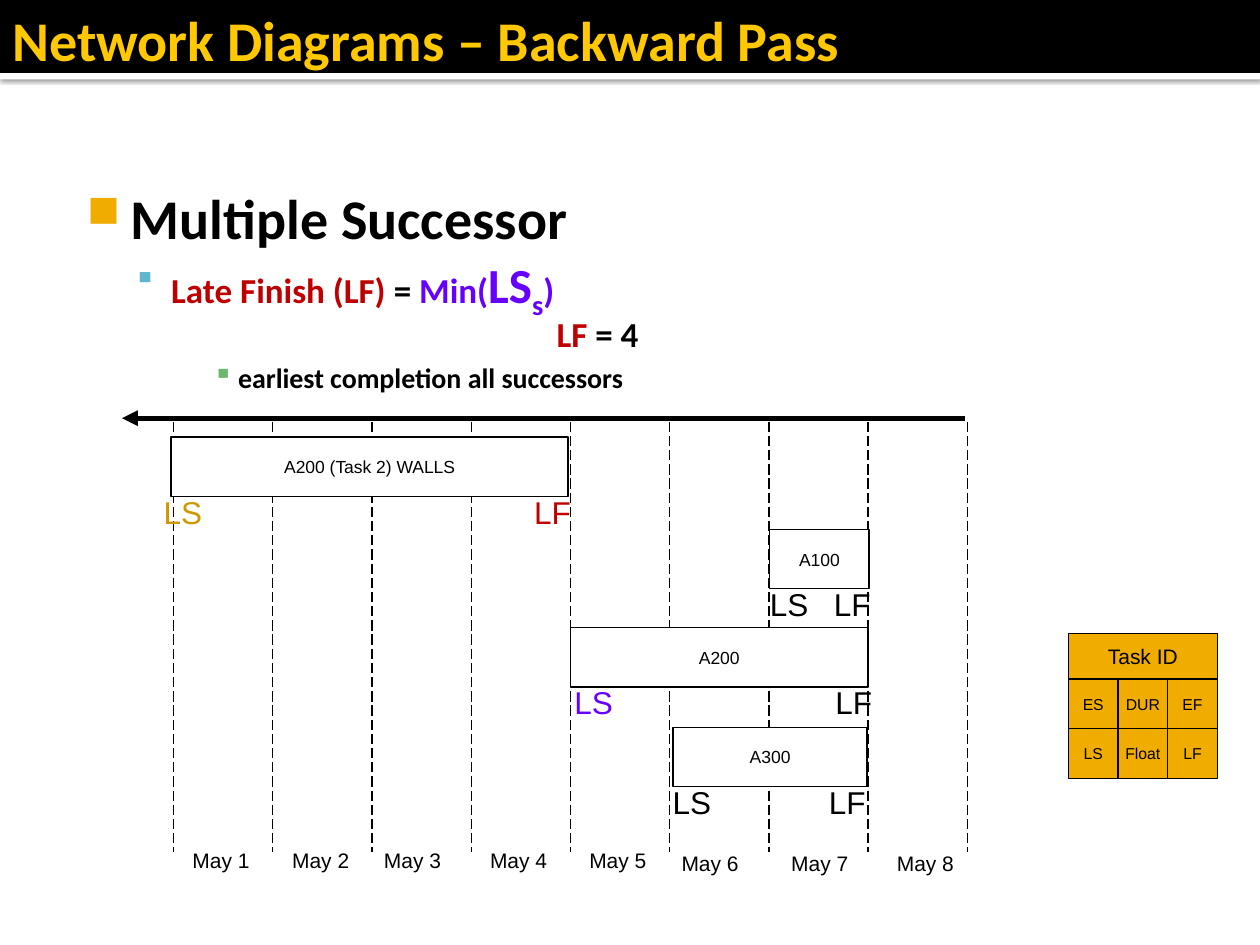
from lxml import etree
from pptx import Presentation, util as u
from pptx.dml.color import RGBColor
from pptx.enum import dml, shapes, text
from pptx.oxml.ns import qn

BLACK, WHITE, GOLD, RED, VIOLET = "000000", "FFFFFF", "F0AD00", "C00000", "6600FF"
TITLE = "Network Diagrams – Backward Pass"

# runs are (text, size, colour); bullets are (char, colour, percent)
BODY = [
    dict(level=0, left=1.22, hang=0.89, before=0, lines=1, bullet=("■", GOLD, 80),
         runs=[("Multiple Successor", 32, BLACK)]),
    dict(level=1, left=2.03, hang=0.76, before=5.6, lines=0.8, bullet=("▪", "60B5CC", 90),
         runs=[("Late Finish (LF)", 20, RED), (" = ", 20, BLACK), ("Min(", 20, VIOLET),
               ("LS", 28, VIOLET), ("s", 28, VIOLET), (")", 20, VIOLET)]),
    dict(level=1, left=9.8, hang=0, before=4, lines=0.8, bullet=None,
         runs=[("LF", 20, RED), (" = 4", 20, BLACK)]),
    dict(level=3, left=3.38, hang=0.51, before=3.2, lines=1, bullet=("▪", "6BB76D", 100),
         runs=[("earliest completion all successors", 16, BLACK)]),
]
# name, left, top, width, then (left, colour) of LS and of LF
TASKS = [
    ("A300", 13.57, 14.66, 3.91, (13.31, BLACK), (16.46, BLACK)),
    ("A200 (Task 2) WALLS", 3.45, 8.81, 8, (3.05, "CC9900"), (10.52, RED)),
    ("A200", 11.5, 12.65, 6, (11.33, VIOLET), (16.59, BLACK)),
    ("A100", 15.52, 10.67, 2, (15.27, BLACK), (16.56, BLACK)),
]
DAYS = [("May 1", 3.63), ("May 2", 5.64), ("May 3", 7.49), ("May 4", 9.63),
        ("May 5", 11.63), ("May 6", 13.49), ("May 7", 15.7), ("May 8", 17.83)]
LEGEND = [("ES", "DUR", "EF"), ("LS", "Float", "LF")]
KEY_X, KEY_Y, KEY_TOP, CELL = 21.54, 13.69, 0.92, 1
GRID_X, DAY, GRID_Y, GRID_END = 3.5, 2, 8.5, 17.17

deck = Presentation()
deck.slide_width, deck.slide_height = u.Inches(10), u.Inches(7.5)
page = deck.slides.add_slide(deck.slide_layouts[6])


def rgb(code):
    return RGBColor.from_string(code)


def add(node, tag, **attrs):
    return etree.SubElement(node, qn(tag), attrs)


def style(run, size, tint, face="Arial", bold=False):
    font = run.font
    font.size, font.name, font.bold = u.Pt(size), face, bold
    font.color.rgb = rgb(tint)


def rect(x, y, w, h, fill, words="", size=10, edge=True):
    box = page.shapes.add_shape(shapes.MSO_SHAPE.RECTANGLE, u.Cm(x), u.Cm(y), u.Cm(w), u.Cm(h))
    box.shadow.inherit = False
    box.fill.solid()
    box.fill.fore_color.rgb = rgb(fill)
    if edge:
        box.line.color.rgb = rgb(BLACK)
        box.line.width = u.Pt(0.75)
    else:
        box.line.fill.background()
    if words:
        frame = box.text_frame
        frame.text, frame.word_wrap = words, False
        frame.vertical_anchor = text.MSO_ANCHOR.MIDDLE
        frame.paragraphs[0].alignment = text.PP_ALIGN.CENTER
        style(frame.paragraphs[0].runs[0], size, BLACK)
    return box


def label(words, x, y, w, h, size, tint):
    frame = page.shapes.add_textbox(u.Cm(x), u.Cm(y), u.Cm(w), u.Cm(h)).text_frame
    frame.text, frame.word_wrap = words, False
    style(frame.paragraphs[0].runs[0], size, tint)
    return frame


def line(x1, y1, x2, y2, width):
    rule = page.shapes.add_connector(
        shapes.MSO_CONNECTOR.STRAIGHT, u.Cm(x1), u.Cm(y1), u.Cm(x2), u.Cm(y2))
    rule.line.color.rgb = rgb(BLACK)
    rule.line.width = u.Pt(width)
    add(rule._element.spPr, "a:effectLst")
    return rule


def write(para, item):
    """Fill one outline paragraph with its indent, bullet and runs."""
    para.level, para.line_spacing = item["level"], float(item["lines"])
    para.space_before = u.Pt(item["before"])
    props = para._p.get_or_add_pPr()
    props.set("marL", str(u.Cm(item["left"])))
    props.set("indent", str(-u.Cm(item["hang"])))
    if item["bullet"]:
        char, tint, scale = item["bullet"]
        add(add(props, "a:buClr"), "a:srgbClr", val=tint)
        add(props, "a:buSzPct", val=str(scale * 1000))
        add(props, "a:buChar", char=char)
    else:
        add(props, "a:buNone")
    for words, size, tint in item["runs"]:
        run = para.add_run()
        run.text = words
        style(run, size, tint, "Calibri", True)
        if words == "s":
            run._r.get_or_add_rPr().set("baseline", "-25000")


# title bar
strip = rect(0, 1.47, 25.4, 0.13, WHITE, edge=False)
glow = add(strip._element.spPr.find(qn("a:effectLst")), "a:outerShdw",
           blurRad=str(u.Pt(2.5)), dist=str(u.Pt(0.8)), dir="5400000")
add(add(glow, "a:srgbClr", val=BLACK)[0:0] or glow[0], "a:alpha", val="60000")
rect(0, 0, 25.4, 1.47, BLACK, edge=False)

# outline
frame = page.shapes.add_textbox(u.Cm(1.27), u.Cm(3.45), u.Cm(22.86), u.Cm(5)).text_frame
frame.word_wrap = True
frame.margin_left, frame.margin_top = u.Cm(0.15), u.Cm(0.25)
for i, item in enumerate(BODY):
    write(frame.add_paragraph() if i else frame.paragraphs[0], item)

# task key
for r, row in enumerate(LEGEND):
    for c, words in enumerate(row):
        rect(KEY_X + c * CELL, KEY_Y + r * CELL, CELL, CELL, GOLD, words, 9)
rect(KEY_X, KEY_Y - KEY_TOP, 3 * CELL, KEY_TOP, GOLD, "Task ID", 12)

# schedule
for i in range(len(DAYS) + 1):
    x = GRID_X + i * DAY
    line(x, GRID_Y, x, GRID_END, 0.75).line.dash_style = dml.MSO_LINE.LONG_DASH
for name, x, y, w, start, end in TASKS:
    rect(x, y, w, 1.2, WHITE, name)
for name, x, y, w, start, end in TASKS:
    for words, (left, tint) in (("LS", start), ("LF", end)):
        label(words, left, y + 1, 1.3, 1.02, 18, tint)
for i, (day, x) in enumerate(DAYS):
    label(day, x, 16.97 if i < 5 else 17.02, 1.68, 0.76, 12, BLACK)
arrow = line(2.46, 8.43, 19.46, 8.43, 3)
add(arrow.line._get_or_add_ln(), "a:headEnd", type="triangle")

head = label(TITLE, 0, 0, 25.4, 1.57, 32, "FFC800")
head.word_wrap, head.vertical_anchor = True, text.MSO_ANCHOR.MIDDLE
style(head.paragraphs[0].runs[0], 32, "FFC800", "Calibri", True)

deck.save("out.pptx")
